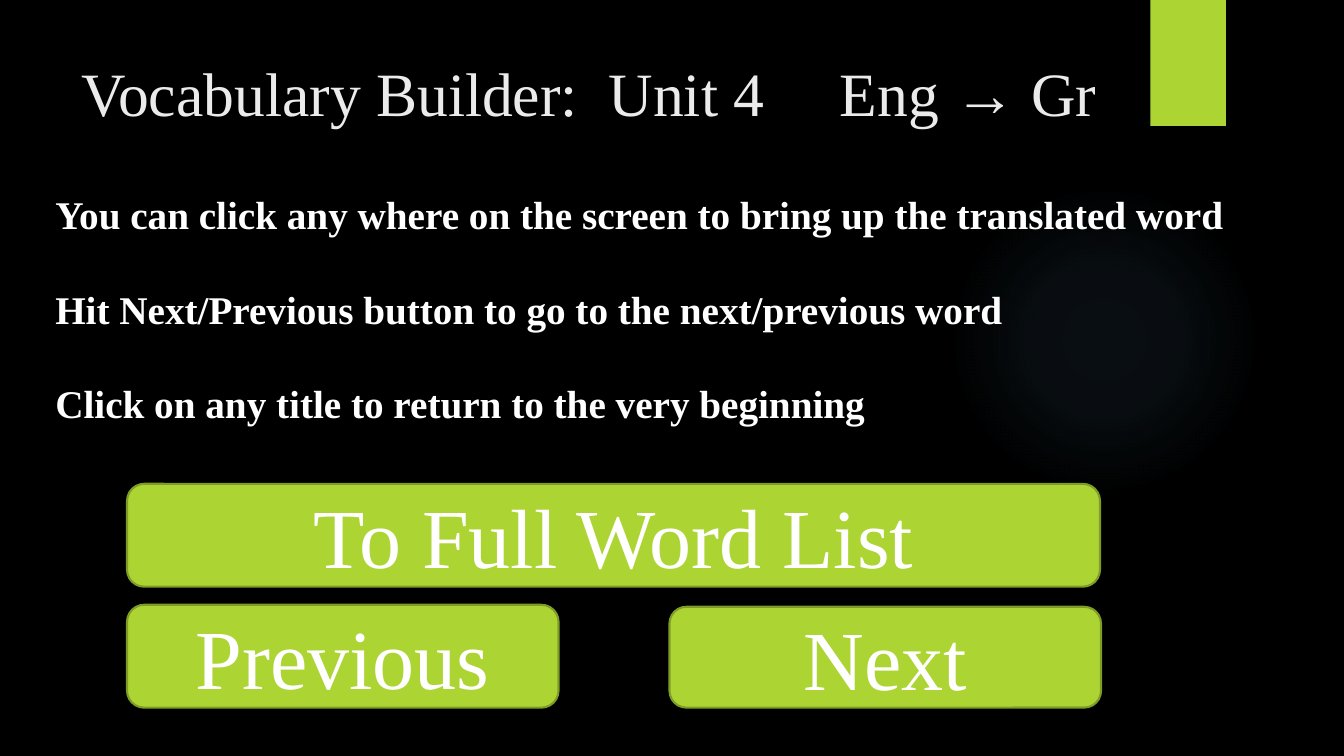
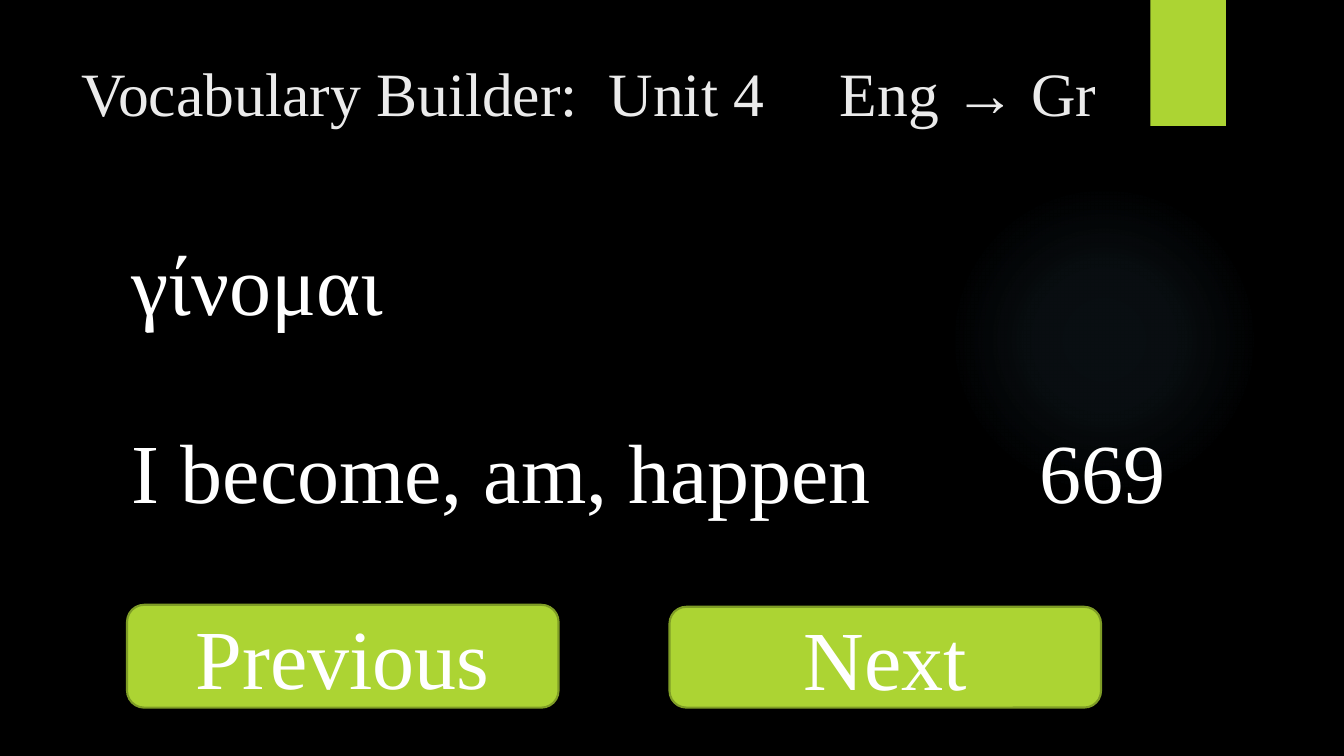
from lxml import etree
from pptx import Presentation
from pptx.dml.color import RGBColor
from pptx.enum.shapes import MSO_SHAPE as SHAPE
from pptx.enum.text import MSO_ANCHOR as ANCHOR, PP_ALIGN as ALIGN
from pptx.oxml import parse_xml
from pptx.oxml.ns import nsdecls, qn
from pptx.util import Inches, Pt

FONT = "Times New Roman"
BLACK, WHITE, TITLE = "000000", "FFFFFF", "EBEBEB"
GREEN, DARK_GREEN, GLOW = "ACD433", "7F9D26", "7AC4F0"
GLOW_STOPS = [(0, 7), (36, 6), (69, 0)]
WORD_SIZE = 60


def rgb(color):
    return RGBColor.from_string(color)


def set_font(p, size, color=WHITE, bold=False):
    p.font.name = FONT
    p.font.size = Pt(size)
    p.font.bold = bold
    p.font.color.rgb = rgb(color)


def add_tab(p, position):
    tabs = etree.SubElement(p._p.get_or_add_pPr(), qn("a:tabLst"))
    etree.SubElement(tabs, qn("a:tab"), pos=str(Inches(position)), algn="l")


def add_text(s, box, lines, size, color=WHITE, bold=False, gap=0, tab=None):
    tf = s.shapes.add_textbox(*map(Inches, box)).text_frame
    tf.word_wrap = True
    for i, line in enumerate(lines):
        p = tf.paragraphs[0] if i == 0 else tf.add_paragraph()
        p.text = line
        if i:
            p.space_before = Pt(gap)
        if tab:
            add_tab(p, tab)
        set_font(p, size, color, bold)


def add_shape(s, kind, box, fill=GREEN):
    sp = s.shapes.add_shape(kind, *map(Inches, box))
    sp.shadow.inherit = False
    sp.fill.solid()
    sp.fill.fore_color.rgb = rgb(fill)
    sp.line.fill.background()
    return sp


def add_glow(s):
    sp = add_shape(s, SHAPE.OVAL, (9.41, 1.83, 3.08, 3.08), GLOW)
    stops = "".join(
        f'<a:gs pos="{pos * 1000}"><a:srgbClr val="{GLOW}">'
        f'<a:alpha val="{alpha * 1000}"/></a:srgbClr></a:gs>'
        for pos, alpha in GLOW_STOPS)
    gradient = parse_xml(
        f'<a:gradFill {nsdecls("a")}><a:gsLst>{stops}</a:gsLst><a:path path="circle">'
        '<a:fillToRect l="50000" t="50000" r="50000" b="50000"/></a:path></a:gradFill>')
    spPr = sp._element.spPr
    spPr.replace(spPr.find(qn("a:solidFill")), gradient)


def add_button(s, label, box):
    sp = add_shape(s, SHAPE.ROUNDED_RECTANGLE, box)
    sp.line.color.rgb = rgb(DARK_GREEN)
    sp.line.width = Pt(1.5)
    tf = sp.text_frame
    tf.vertical_anchor = ANCHOR.MIDDLE
    p = tf.paragraphs[0]
    p.text = label
    p.alignment = ALIGN.CENTER
    set_font(p, WORD_SIZE)


def add_slide(prs):
    s = prs.slides.add_slide(prs.slide_layouts[6])
    s.background.fill.solid()
    s.background.fill.fore_color.rgb = rgb(BLACK)
    add_glow(s)
    add_shape(s, SHAPE.RECTANGLE, (11.41, 0, 0.75, 1.25))
    add_text(s, (0.71, 0.5, 10.88, 0.96), ["Vocabulary Builder:  Unit 4\tEng → Gr"],
             44, TITLE, tab=7.52)
    add_button(s, "Previous", (1.26, 6, 4.28, 1.02))
    add_button(s, "Next", (6.64, 6.02, 4.28, 1))
    return s


def add_help_slide(prs):
    s = add_slide(prs)
    add_text(s, (0.45, 1.84, 12.19, 2.93), [
        "You can click any where on the screen to bring up the translated word",
        "Hit Next/Previous button to go to the next/previous word",
        "Click on any title to return to the very beginning",
    ], 28, bold=True, gap=34)
    add_button(s, "To Full Word List", (1.26, 4.8, 9.65, 1.02))


def add_word_slide(prs, greek, english, count):
    s = add_slide(prs)
    add_text(s, (1.21, 2.25, 9.78, 1.55), [greek], WORD_SIZE)
    add_text(s, (1.21, 4.11, 10.55, 1.11), [f"{english}\t{count}"], WORD_SIZE, tab=9)


def main():
    prs = Presentation()
    prs.slide_width, prs.slide_height = Inches(13.33), Inches(7.5)
    add_help_slide(prs)
    add_word_slide(prs, "γίνομαι", "I become, am, happen", 669)
    prs.save("out.pptx")


if __name__ == "__main__":
    main()
